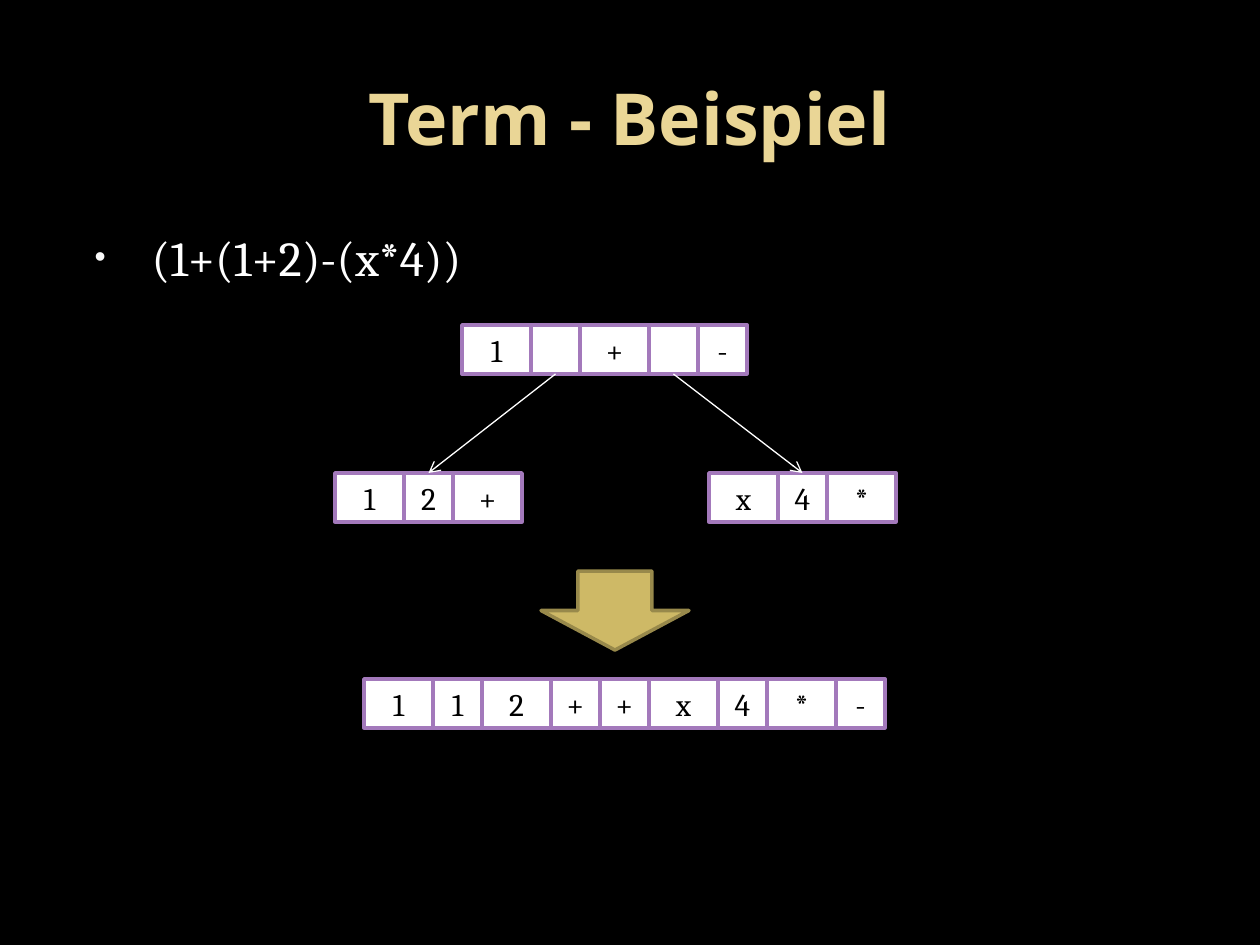
from lxml.etree import SubElement
from pptx import Presentation
from pptx.dml.color import RGBColor
from pptx.enum.shapes import MSO_CONNECTOR, MSO_SHAPE
from pptx.enum.text import MSO_ANCHOR, PP_ALIGN
from pptx.oxml.ns import qn
from pptx.util import Pt

PX = 914400 / 126
WIDE, NARROW, CELL_H = 69, 49, 49
SERIF, SANS = "Cambria", "Open Sans"

TITLE = "Term - Beispiel"
EXPRESSION = "(1+(1+2)-(x*4))"
# name: (left, top, cell texts, cell widths)
STACKS = {
    "root": (462, 325, ["1", "", "+", "", "-"],
             [WIDE, NARROW, WIDE, NARROW, NARROW]),
    "sum": (335, 473, ["1", "2", "+"], [WIDE, NARROW, WIDE]),
    "product": (709, 473, ["x", "4", "*"], [WIDE, NARROW, WIDE]),
    "result": (364, 679, ["1", "1", "2", "+", "+", "x", "4", "*", "-"],
               [WIDE, NARROW, WIDE, NARROW, NARROW, WIDE, NARROW, WIDE, NARROW]),
}
# (stack, cell) the pointer starts in, and the one it leads to
POINTERS = [(("root", 1), ("sum", 1)), (("root", 3), ("product", 1))]


def px(*values):
    return [round(v * PX) for v in values]


def color(value):
    return RGBColor.from_string(value)


def write(tf, text, size, font=SERIF, fill="000000", bold=False, align=PP_ALIGN.CENTER):
    p = tf.paragraphs[0]
    p.alignment = align
    r = p.add_run()
    r.text = text
    r.font.size, r.font.name, r.font.bold = Pt(size), font, bold
    r.font.color.rgb = color(fill)
    return p


def place(sp, left, top, width, height):
    sp.left, sp.top, sp.width, sp.height = px(left, top, width, height)


def add_box(s, kind, left, top, width, height, fill, line):
    sp = s.shapes.add_shape(kind, *px(left, top, width, height))
    sp.shadow.inherit = False
    sp.fill.solid()
    sp.fill.fore_color.rgb = color(fill)
    sp.line.color.rgb = color(line)
    sp.line.width = Pt(2)
    return sp


def add_stack(s, left, top, texts, widths):
    """Draw a row of touching cells and return them."""
    cells = []
    for i, (text, width) in enumerate(zip(texts, widths)):
        sp = add_box(s, MSO_SHAPE.RECTANGLE, left + sum(widths[:i]), top,
                     width, CELL_H, "FFFFFF", "A379BB")
        tf = sp.text_frame
        tf.vertical_anchor = MSO_ANCHOR.MIDDLE
        if text:
            write(tf, text, 18)
        cells.append(sp)
    return cells


def add_pointer(s, start, end):
    c = s.shapes.add_connector(MSO_CONNECTOR.STRAIGHT,
                               start.left + start.width // 2, start.top + start.height,
                               end.left + end.width // 2, end.top)
    c.line.color.rgb = color("FFFFFF")
    c.line.width = Pt(0.75)
    SubElement(c.line._get_or_add_ln(), qn("a:tailEnd"), type="arrow")
    SubElement(c._element.spPr, qn("a:effectLst"))


def set_bullet(p, char, fill, percent, left, hanging):
    pPr = p._p.get_or_add_pPr()
    margin, indent = px(left, -hanging)
    pPr.set("marL", str(margin))
    pPr.set("indent", str(indent))
    SubElement(SubElement(pPr, qn("a:buClr")), qn("a:srgbClr"), val=fill)
    SubElement(pPr, qn("a:buSzPct"), val=str(percent * 1000))
    SubElement(pPr, qn("a:buChar"), char=char)


def main():
    prs = Presentation()
    prs.slide_width, prs.slide_height = px(1260, 945)
    s = prs.slides.add_slide(prs.slide_layouts[1])
    s.background.fill.solid()
    s.background.fill.fore_color.rgb = color("000000")

    title, body = s.placeholders
    place(title, 63, 38, 1134, 158)
    title.text_frame.vertical_anchor = MSO_ANCHOR.MIDDLE
    write(title.text_frame, TITLE, 41, font=SANS, fill="EAD696", bold=True)
    place(body, 63, 221, 1134, 649)
    p = write(body.text_frame, EXPRESSION, 28, fill="FFFFFF", align=PP_ALIGN.LEFT)
    set_bullet(p, "•", "F9F9F9", 65, left=76, hanging=57)

    stacks = {name: add_stack(s, *stack) for name, stack in STACKS.items()}
    for (source, i), (target, j) in POINTERS:
        add_pointer(s, stacks[source][i], stacks[target][j])
    add_box(s, MSO_SHAPE.DOWN_ARROW, 541, 571, 148, 79, "CEB966", "98894B")

    prs.save("out.pptx")


if __name__ == "__main__":
    main()
